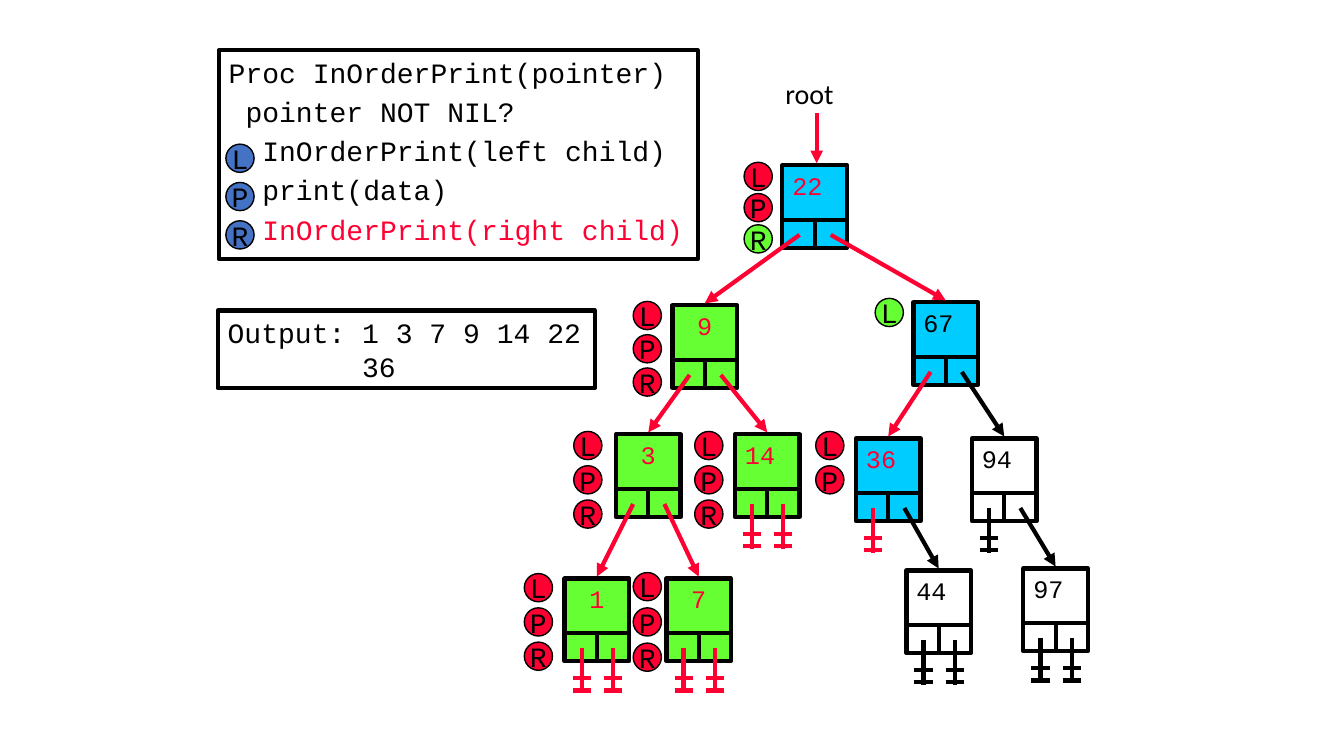
from lxml import etree
from pptx import Presentation, util as u
from pptx.dml import color
from pptx.enum import shapes, text
from pptx.oxml import ns

BLACK, RED, BLUE, GREEN, NAVY = "000000", "FF0033", "00CCFF", "66FF33", "4472C4"
MONO = "Courier New"
CHAR = 12  # width in points of one 20 pt mono letter
SIDE, DATA, SLOT = 0.64, 0.54, 0.28  # node width, upper and lower heights
BOX, OVAL = shapes.MSO_SHAPE.RECTANGLE, shapes.MSO_SHAPE.OVAL

# key: left, top, fill, ink, left child, right child
TREE = {
    "22": (7.76, 1.64, BLUE, RED, "9", "67"),
    "67": (9.06, 3.0, BLUE, BLACK, "36", "94"),
    "36": (8.49, 4.35, BLUE, RED, None, "44"),
    "3": (6.11, 4.31, GREEN, RED, "1", "7"),
    "14": (7.29, 4.31, GREEN, RED, None, None),
    "44": (8.99, 5.66, None, BLACK, None, None),
    "7": (6.61, 5.74, GREEN, RED, None, None),
    "94": (9.64, 4.35, None, BLACK, None, "97"),
    "97": (10.15, 5.64, None, BLACK, None, None),
    "1": (5.6, 5.74, GREEN, RED, None, None),
    "9": (6.67, 3.03, GREEN, RED, "3", "14"),
}

# left, top, step, letters, fills
STEPS = [
    (2.24, 1.43, 0.38, "LPR", [NAVY] * 3),
    (5.2, 5.69, 0.34, "LPR", [RED] * 3),
    (5.69, 4.28, 0.34, "LPR", [RED] * 3),
    (6.28, 5.68, 0.35, "LPR", [RED] * 3),
    (6.89, 4.28, 0.34, "LPR", [RED] * 3),
    (6.28, 2.99, 0.33, "LPR", [RED] * 3),
    (7.38, 1.61, 0.31, "LPR", [RED, RED, GREEN]),
    (8.68, 2.96, 0, "L", [GREEN]),
    (8.09, 4.28, 0.34, "LP", [RED] * 2),
]

# text, indent in letters, ink
CODE = [
    ("Proc InOrderPrint(pointer)", 0, BLACK),
    ("pointer NOT NIL?", 1, BLACK),
    ("InOrderPrint(left child)", 2, BLACK),
    ("print(data)", 2, BLACK),
    ("InOrderPrint(right child)", 2, RED),
]
OUTPUT = [("Output: 1 3 7 9 14 22", 0, BLACK), ("36", 8, BLACK)]


def rgb(code):
    return color.RGBColor.from_string(code)


def write(shape, lines, size=20, font=MONO, mid=False, center=False, gap=0):
    """Put (text, indent, ink) lines into a shape."""
    frame = shape.text_frame
    frame.word_wrap = False
    anchor = text.MSO_ANCHOR
    frame.vertical_anchor = anchor.MIDDLE if mid else anchor.TOP
    for i, (words, indent, ink) in enumerate(lines):
        para = frame.add_paragraph() if i else frame.paragraphs[0]
        para.alignment = text.PP_ALIGN.CENTER if center else text.PP_ALIGN.LEFT
        para.space_before = u.Pt(gap)
        if indent:
            para._p.get_or_add_pPr().set("marL", str(u.Pt(indent * CHAR)))
        run = para.add_run()
        run.text = words
        run.font.size, run.font.name = u.Pt(size), font
        run.font.color.rgb = rgb(ink)


def block(home, x, y, w, h, fill=None, kind=BOX, width=3):
    shape = home.add_shape(kind, *map(u.Inches, (x, y, w, h)))
    shape.shadow.inherit = False
    if fill:
        shape.fill.solid()
        shape.fill.fore_color.rgb = rgb(fill)
    else:
        shape.fill.background()
    shape.line.color.rgb = rgb(BLACK)
    shape.line.width = u.Pt(width)
    return shape


def stroke(home, start, end, ink=BLACK, arrow=False):
    line = home.add_connector(shapes.MSO_CONNECTOR.STRAIGHT,
                              *map(u.Inches, (*start, *end)))
    line.line.color.rgb = rgb(ink)
    line.line.width = u.Pt(3)
    props = line.element.spPr
    if arrow:
        etree.SubElement(props.find(ns.qn("a:ln")), ns.qn("a:tailEnd"), type="triangle")
    etree.SubElement(props, ns.qn("a:effectLst"))


def node(home, key):
    x, y, fill, ink = TREE[key][:4]
    group = home.add_group_shape().shapes
    top = block(group, x, y, SIDE, DATA, fill)
    write(top, [(key, 0, ink)], size=18, center=len(key) == 1)
    low = y + DATA
    block(group, x, low, SIDE, SLOT, fill)
    stroke(group, (x + SIDE / 2, low), (x + SIDE / 2, low + SLOT))


def ground(home, x, y, ink):
    """Mark an empty pointer."""
    group = home.add_group_shape().shapes
    stroke(group, (x, y), (x, y + 0.45), ink)
    for drop in (0.3, 0.42):
        stroke(group, (x - 0.09, y + drop), (x + 0.09, y + drop), ink)


def links(home, key):
    x, y, fill, _, *kids = TREE[key]
    for shift, kid in zip((0.17, 0.48), kids):
        start = (x + shift, y + 0.69)
        if kid:
            left, top, seen = TREE[kid][:3]
            stroke(home, start, (left + SIDE / 2, top - 0.02),
                   RED if seen else BLACK, arrow=True)
        else:
            ground(home, *start, RED if fill else BLACK)


def badges(home, x, y, step, names, fills):
    for i, (name, fill) in enumerate(zip(names, fills)):
        dot = block(home, x, y + i * step, 0.28, 0.28, fill, OVAL, 1)
        write(dot, [(name, 0, BLACK)], mid=True, center=True)


def main():
    deck = Presentation()
    deck.slide_width, deck.slide_height = u.Inches(13.33), u.Inches(7.5)
    home = deck.slides.add_slide(deck.slide_layouts[6]).shapes

    # Procedure and output
    write(block(home, 2.17, 0.5, 4.75, 2.07), CODE, gap=4)
    write(block(home, 2.16, 3.08, 3.74, 0.77), OUTPUT)

    # Root pointer
    root = home.add_textbox(*map(u.Inches, (7.69, 0.71, 0.68, 0.44)))
    write(root, [("root", 0, BLACK)], font="Calibri")
    stroke(home, (8.1, 1.12), (8.1, 1.62), RED, arrow=True)

    # Tree
    for key in TREE:
        node(home, key)
    for key in TREE:
        links(home, key)

    # Visit marks
    for row in STEPS:
        badges(home, *row)

    deck.save("out.pptx")


if __name__ == "__main__":
    main()
